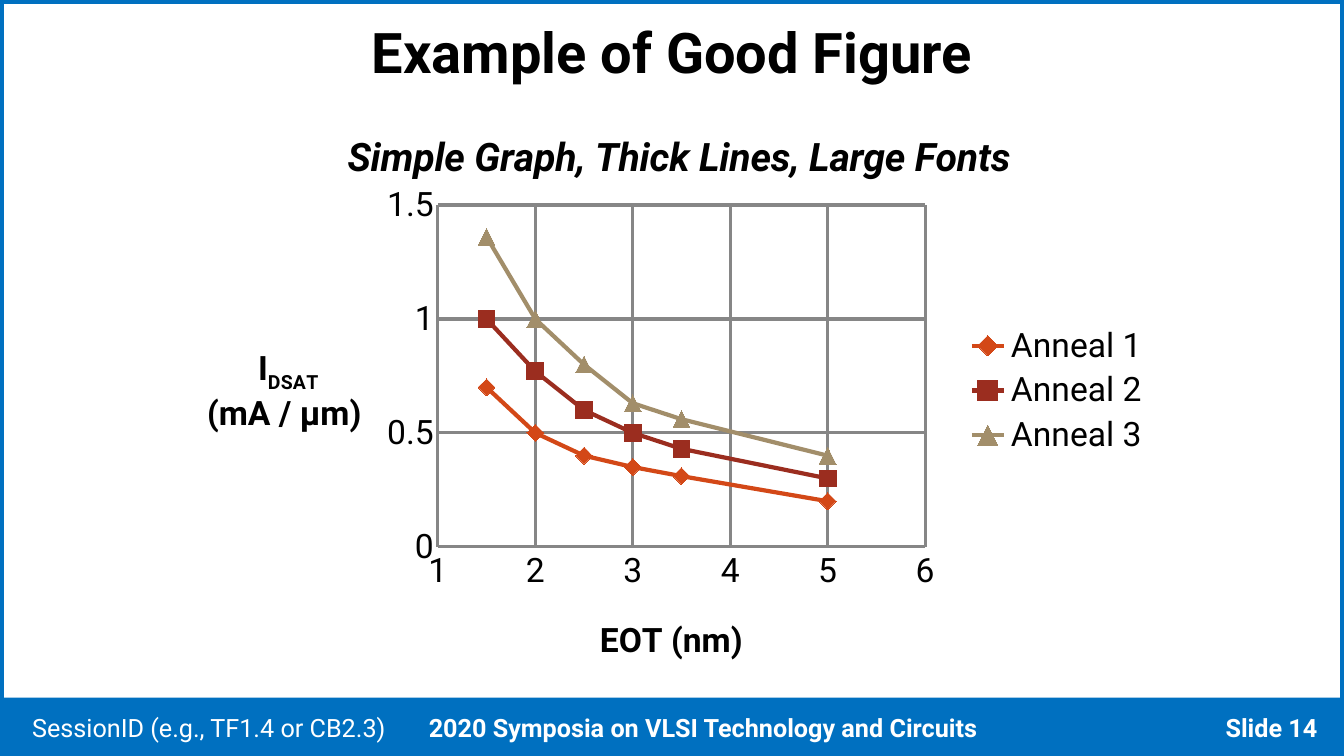
import pptx
import pptx.chart.data
import pptx.dml.color
import pptx.enum.chart
import pptx.enum.shapes
import pptx.enum.text
import pptx.oxml
import pptx.oxml.ns
import pptx.util

Cm = pptx.util.Cm
Pt = pptx.util.Pt
RGB = pptx.dml.color.RGBColor
ALIGN = pptx.enum.text.PP_ALIGN
MARK = pptx.enum.chart.XL_MARKER_STYLE

BLUE = RGB(0x00, 0x70, 0xC0)
WHITE = RGB(0xFF, 0xFF, 0xFF)
BLACK = RGB(0x00, 0x00, 0x00)
GRAY = RGB(0x86, 0x86, 0x86)
ORANGE = RGB(0xD3, 0x48, 0x17)
RED = RGB(0x9B, 0x2D, 0x1F)
TAN = RGB(0xA2, 0x8E, 0x6A)

FONT = "Roboto"
WIDE, HIGH = 33.87, 19.05
EOT = (1.5, 2, 2.5, 3, 3.5, 5)
CURVES = (
    ("Anneal 1", ORANGE, MARK.DIAMOND, (0.7, 0.5, 0.4, 0.35, 0.31, 0.2)),
    ("Anneal 2", RED, MARK.SQUARE, (1, 0.77, 0.6, 0.5, 0.43, 0.3)),
    ("Anneal 3", TAN, MARK.TRIANGLE, (1.36, 1, 0.8, 0.63, 0.56, 0.4)),
)


def add_run(par, text, size=24, color=BLACK, bold=True, italic=False, sub=False):
    """Append one formatted run to a paragraph."""
    run = par.add_run()
    run.text = text
    font = run.font
    font.name, font.size = FONT, Pt(size)
    font.bold, font.italic = bold, italic
    font.color.rgb = color
    if sub:
        run._r.get_or_add_rPr().set("baseline", "-25000")


def add_text(slide, text, box, align=ALIGN.CENTER, **style):
    """Add a text box with one line of text."""
    frame = slide.shapes.add_textbox(*map(Cm, box)).text_frame
    frame.word_wrap = True
    frame.vertical_anchor = pptx.enum.text.MSO_ANCHOR.MIDDLE
    frame.paragraphs[0].alignment = align
    add_run(frame.paragraphs[0], text, **style)


def add_rect(slide, box, fill=None, line=None):
    """Add a rectangle with an optional fill and outline."""
    kind = pptx.enum.shapes.MSO_SHAPE.RECTANGLE
    rect = slide.shapes.add_shape(kind, *map(Cm, box))
    rect.shadow.inherit = False
    if fill:
        rect.fill.solid()
        rect.fill.fore_color.rgb = fill
    else:
        rect.fill.background()
    if line:
        rect.line.color.rgb = line
        rect.line.width = Pt(6)
    else:
        rect.line.fill.background()


def place(node, index, inner=False, **spot):
    """Give a chart part a manual layout in fractions of the chart."""
    for old in node.findall(pptx.oxml.ns.qn("c:layout")):
        node.remove(old)
    body = '<c:layoutTarget val="inner"/>' if inner else ""
    body += "".join(f'<c:{key}Mode val="edge"/>' for key in "xy")
    body += "".join(f'<c:{key} val="{val}"/>' for key, val in spot.items())
    space = pptx.oxml.ns.nsdecls("c")
    xml = f"<c:layout {space}><c:manualLayout>{body}</c:manualLayout></c:layout>"
    node.insert(index, pptx.oxml.parse_xml(xml))


def set_line(line, color, width):
    """Set the colour and width of a line."""
    line.color.rgb = color
    line.width = Pt(width)


def set_axis(axis, low, high, step):
    """Set the scale, grid and labels of an axis."""
    axis.minimum_scale, axis.maximum_scale = low, high
    axis.major_unit = step
    axis.has_major_gridlines = True
    set_line(axis.major_gridlines.format.line, GRAY, 2.25)
    set_line(axis.format.line, GRAY, 2.25)
    none = pptx.enum.chart.XL_TICK_MARK.NONE
    axis.major_tick_mark = axis.minor_tick_mark = none
    labels = axis.tick_labels
    labels.number_format = "General"
    labels.number_format_is_linked = False


def set_title(owner, lines, x, y, **style):
    """Write a title from lines of (text, sub) parts and place it."""
    frame = getattr(owner, "chart_title", None) or owner.axis_title
    text = frame.text_frame
    for num, parts in enumerate(lines):
        par = text.add_paragraph() if num else text.paragraphs[0]
        par.alignment = ALIGN.CENTER
        for word, sub in parts:
            add_run(par, word, sub=sub, **style)
    text._txBody.bodyPr.set("rot", "0")
    text._txBody.bodyPr.set("vert", "horz")
    place(frame._element, 1, x=x, y=y)


def add_graph(slide, box):
    """Add the scatter chart of the three anneals."""
    data = pptx.chart.data.XyChartData()
    for name, _, _, vals in CURVES:
        series = data.add_series(name)
        for x, y in zip(EOT, vals):
            series.add_data_point(x, y)
    kind = pptx.enum.chart.XL_CHART_TYPE.XY_SCATTER_LINES
    chart = slide.shapes.add_chart(kind, *map(Cm, box), data).chart
    chart.font.name, chart.font.size = FONT, Pt(24)
    chart.font.color.rgb = BLACK
    plot = chart.plots[0]
    plot.vary_by_categories = False
    for series, (_, color, mark, _) in zip(plot.series, CURVES):
        series.smooth = False
        set_line(series.format.line, color, 3)
        series.marker.style, series.marker.size = mark, 12
        series.marker.format.fill.solid()
        series.marker.format.fill.fore_color.rgb = color
        series.marker.format.line.color.rgb = color
    set_axis(chart.category_axis, 1, 6, 1)
    set_axis(chart.value_axis, 0, 1.5, 0.5)
    head = "Simple Graph, Thick Lines, Large Fonts"
    set_title(chart, [[(head, False)]], 0.16, 0.04, size=28, italic=True)
    set_title(chart.category_axis, [[("EOT (nm)", False)]], 0.42, 0.88)
    unit = [[("I", False), ("DSAT", True)], [("(mA / µm) ", False)]]
    set_title(chart.value_axis, unit, 0.02, 0.42)
    chart.has_legend = True
    legend = chart.legend
    legend.position = pptx.enum.chart.XL_LEGEND_POSITION.RIGHT
    legend.include_in_layout = False
    place(legend._element, 1, x=0.8, y=0.38, w=0.19, h=0.24)
    area = chart._chartSpace.chart.plotArea
    place(area, 0, inner=True, x=0.26, y=0.18, w=0.5, h=0.59)


def main():
    """Build the slide and save it."""
    deck = pptx.Presentation()
    deck.slide_width, deck.slide_height = Cm(WIDE), Cm(HIGH)
    slide = deck.slides.add_slide(deck.slide_layouts[6])
    add_rect(slide, (0, 17.58, WIDE, 1.47), fill=BLUE)
    add_rect(slide, (0, 0, WIDE, HIGH), line=BLUE)
    foot = {"size": 18, "color": WHITE}
    event = "2020 Symposia on VLSI Technology and Circuits"
    add_text(slide, event, (5.87, 17.81, 23.7, 1.02), **foot)
    add_text(slide, "Example of Good Figure", (0.56, 0.43, 32.74, 1.7), size=40)
    add_graph(slide, (4.65, 2.54, 24.56, 14.6))
    add_text(slide, "Slide 14", (24.41, 17.83, 9.04, 1.02), ALIGN.RIGHT, **foot)
    label = "SessionID (e.g., TF1.4 or CB2.3)"
    add_text(slide, label, (0.56, 17.83, 10.59, 1.02), ALIGN.LEFT, bold=False, **foot)
    deck.save("out.pptx")


if __name__ == "__main__":
    main()
